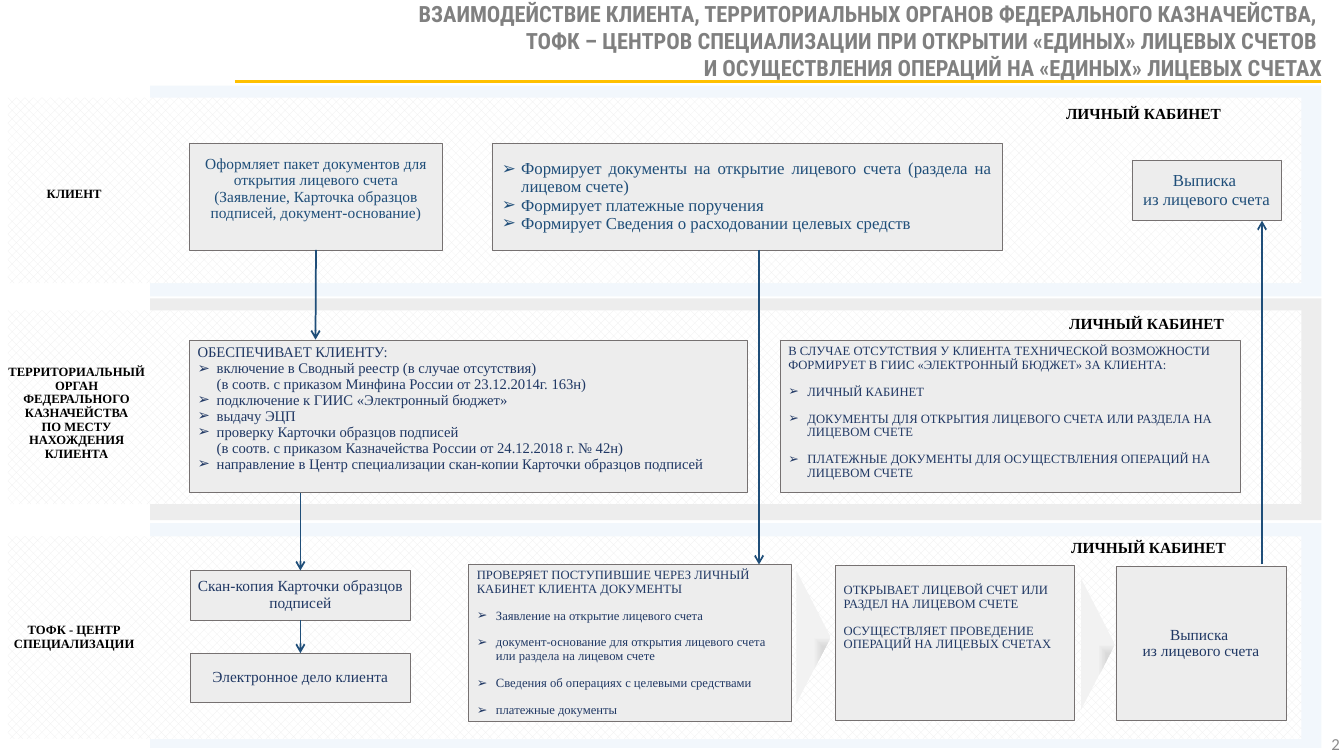
import pptx
import pptx.util
import pptx.dml.color
import pptx.enum.dml
import pptx.enum.shapes
import pptx.enum.text
import pptx.oxml.ns
import lxml.etree

RGBColor = pptx.dml.color.RGBColor
Pt = pptx.util.Pt
Shape = pptx.enum.shapes.MSO_SHAPE
Align = pptx.enum.text.PP_ALIGN
Anchor = pptx.enum.text.MSO_ANCHOR
qn = pptx.oxml.ns.qn

WHITE = RGBColor(0xFF, 0xFF, 0xFF)
BLACK = RGBColor(0, 0, 0)
PALE = RGBColor(0xF2, 0xF7, 0xFC)
GREY = RGBColor(0xED, 0xED, 0xED)
EDGE = RGBColor(0x76, 0x71, 0x71)
BLUE = RGBColor(0x1F, 0x4E, 0x79)
NAVY = RGBColor(0x20, 0x38, 0x64)
GOLD = RGBColor(0xFF, 0xC0, 0x00)
TITLE = RGBColor(0x80, 0x80, 0x80)
PAGE = RGBColor(0x8C, 0x8C, 0x8C)
SILVER = RGBColor(0xD9, 0xD9, 0xD9)
MIST = RGBColor(0xF2, 0xF2, 0xF2)

SERIF = "Times New Roman"
CELL = 0.1
COLS, ROWS = 133.33, 75
TIGHT = (0.01, 0.01, 0.01, 0.01)
WIDE = (0.08, 0.04, 0.08, 0.04)
PLAIN = (0.1, 0.05, 0.1, 0.05)


def grid(*cells):
    return [pptx.util.Inches(n * CELL) for n in cells]


def apply(item, style):
    for key, value in style.items():
        setattr(item, key, value)


class Board:
    def __init__(self, deck):
        deck.slide_width, deck.slide_height = grid(COLS, ROWS)
        self.slide = deck.slides.add_slide(deck.slide_layouts[4])
        self.shapes = self.slide.shapes
        self.para = {"line_spacing": 0.9, "space_before": Pt(0), "space_after": Pt(0)}

    def place(self, item, area):
        apply(item, dict(zip(("left", "top", "width", "height"), grid(*area))))
        self.shapes._spTree.append(item._element)

    def paint(self, item, fill, edge=None):
        item.fill.solid()
        item.fill.fore_color.rgb = fill
        if edge is None:
            item.line.fill.background()
        else:
            item.line.color.rgb = edge
            item.line.width = Pt(0.5)

    def text(self, item, lines, size, color, align=Align.CENTER, inset=TIGHT,
             anchor=Anchor.MIDDLE, bold=False, face=SERIF, pitch=0.9):
        frame = item.text_frame
        sides = ("margin_left", "margin_top", "margin_right", "margin_bottom")
        apply(frame, dict(zip(sides, map(pptx.util.Inches, inset))))
        apply(frame, {"word_wrap": True, "vertical_anchor": anchor,
                      "auto_size": pptx.enum.text.MSO_AUTO_SIZE.NONE})
        for spot, line in enumerate(lines):
            para = frame.paragraphs[0] if spot == 0 else frame.add_paragraph()
            para.text = line
            apply(para, {**self.para, "alignment": align, "line_spacing": pitch})
            for run in para.runs:
                apply(run.font, {"name": face, "size": Pt(size), "bold": bold})
                run.font.color.rgb = color
            for gap in para._p.findall(qn("a:br")):
                lxml.etree.SubElement(gap, qn("a:rPr"), sz=str(int(size * 100)))
        return frame.paragraphs

    def title(self, area, text):
        item = self.shapes.title
        self.place(item, area)
        self.text(item, [text], 16, TITLE, Align.RIGHT, WIDE, Anchor.TOP,
                  True, "Roboto Condensed", 1.0)

    def label(self, area, lines, size=9, color=BLACK, **look):
        item = self.shapes.add_textbox(*grid(*area))
        self.text(item, lines, size, color, **look)

    def box(self, area, lines, size=11, color=NAVY, **look):
        item = self.shapes.add_shape(Shape.RECTANGLE, *grid(*area))
        item.shadow.inherit = False
        self.paint(item, GREY, EDGE)
        self.text(item, lines, size, color, **look)
        return item

    def bullets(self, slot, area, head, items, size, color=NAVY, gap=0, **look):
        item = self.slide.placeholders[slot]
        self.place(item, area)
        self.paint(item, GREY, EDGE)
        paras = self.text(item, head + items, size, color, **look)
        for spot, para in enumerate(paras):
            props = para._p.get_or_add_pPr()
            if spot:
                para.space_before = Pt(gap)
            if spot < len(head):
                indent = 0
                lxml.etree.SubElement(props, qn("a:buNone"))
            else:
                indent = pptx.util.Inches(0.19)
                lxml.etree.SubElement(props, qn("a:buChar"), char="➢")
            props.set("marL", str(indent))
            props.set("indent", str(-indent))

    def lane(self, color, outer, inner, tag):
        back = self.shapes.add_shape(Shape.RECTANGLE, *grid(14.9, outer[0], 116.2, outer[1]))
        weave = self.shapes.add_shape(Shape.RECTANGLE, *grid(0.8, inner[0], 128.3, inner[1]))
        for item in (back, weave):
            item.shadow.inherit = False
            self.paint(item, color)
        weave.fill.patterned()
        weave.fill.pattern = pptx.enum.dml.MSO_PATTERN.WEAVE
        weave.fill.fore_color.rgb = GREY
        weave.fill.back_color.rgb = WHITE
        self.label((*tag, 16.9, 3.8), ["ЛИЧНЫЙ КАБИНЕТ"], 11, bold=True)

    def line(self, start, end, color=BLUE, width=1.25, arrow=True, tail=None, head=None):
        kind = pptx.enum.shapes.MSO_CONNECTOR.STRAIGHT
        item = self.shapes.add_connector(kind, *grid(*start, *end))
        item.line.color.rgb = color
        item.line.width = Pt(width)
        if tail is not None:
            item.begin_connect(tail, 2)
        if head is not None:
            item.end_connect(head, 0)
        if arrow:
            lxml.etree.SubElement(item.line._get_or_add_ln(), qn("a:tailEnd"), type="arrow")
        lxml.etree.SubElement(item._element.spPr, qn("a:effectLst"))

    def wedge(self, left, top):
        item = self.shapes.add_shape(Shape.FLOWCHART_MERGE, *grid(left, top, 13.2, 3.4))
        item.rotation = 270
        item.shadow.inherit = False
        item.line.fill.background()
        item.fill.gradient()
        for stop, color, spot in zip(item.fill.gradient_stops, (SILVER, MIST), (0.46, 1)):
            stop.color.rgb = color
            stop.position = spot
        grad = item._element.spPr.find(qn("a:gradFill"))
        old = grad.find(qn("a:lin"))
        focus = lxml.etree.Element(qn("a:path"), {"path": "rect"})
        lxml.etree.SubElement(focus, qn("a:fillToRect"), l="100000", t="100000")
        grad.replace(old, focus)


def main():
    deck = pptx.Presentation()
    board = Board(deck)
    for lane in (
        (PALE, (51.9, 22.3), (53.2, 20.1), (105.5, 52.5)),
        (GREY, (29.6, 22), (30.8, 19.2), (105.3, 30.3)),
        (PALE, (8.5, 20.9), (9.7, 18.4), (105, 9.5)),
    ):
        board.lane(*lane)
    for area, lines in (
        ((-0.1, 14.5, 14.9, 9.6), ["КЛИЕНТ"]),
        ((0.1, 34.4, 15, 13.2), ["ТЕРРИТОРИАЛЬНЫЙ ОРГАН ФЕДЕРАЛЬНОГО КАЗНАЧЕЙСТВА",
                                 "ПО МЕСТУ НАХОЖДЕНИЯ КЛИЕНТА"]),
        ((-0.1, 60.3, 14.9, 5.9), ["ТОФК - ЦЕНТР СПЕЦИАЛИЗАЦИИ"]),
    ):
        board.label(area, lines, bold=True)

    board.title((2.8, -0.4, 129.2, 8.9),
                "ВЗАИМОДЕЙСТВИЕ КЛИЕНТА, ТЕРРИТОРИАЛЬНЫХ ОРГАНОВ ФЕДЕРАЛЬНОГО КАЗНАЧЕЙСТВА, \v"
                "ТОФК – ЦЕНТРОВ СПЕЦИАЛИЗАЦИИ ПРИ ОТКРЫТИИ «ЕДИНЫХ» ЛИЦЕВЫХ СЧЕТОВ \v"
                "И ОСУЩЕСТВЛЕНИЯ ОПЕРАЦИЙ НА «ЕДИНЫХ» ЛИЦЕВЫХ СЧЕТАХ")
    board.line((23.3, 8.1), (131.1, 8.1), GOLD, 2, False)

    pack = board.box((18.8, 14.2, 25.1, 10.6),
                     ["Оформляет пакет документов для открытия лицевого счета "
                      "(Заявление, Карточка образцов подписей, документ-основание)"],
                     color=BLUE, inset=(0.1, 0.05, 0.1, 0.2))
    board.bullets(1, (48.8, 14.2, 50.6, 10.6), [],
                  ["Формирует документы на открытие лицевого счета (раздела на лицевом счете) ",
                   "Формирует платежные поручения",
                   "Формирует Сведения о расходовании целевых средств "],
                  12, BLUE, align=Align.JUSTIFY, inset=PLAIN)
    extract = ["Выписка ", "из лицевого счета"]
    board.box((112.3, 15.9, 14.8, 6), extract, 12, BLUE, inset=PLAIN)

    board.bullets(2, (18.8, 33.8, 55.3, 15.1), ["ОБЕСПЕЧИВАЕТ КЛИЕНТУ:"],
                  ["включение в Сводный реестр (в случае отсутствия) \v"
                   "(в соотв. с приказом Минфина России от 23.12.2014г. 163н)",
                   "подключение к ГИИС «Электронный бюджет»",
                   "выдачу ЭЦП",
                   "проверку Карточки образцов подписей \v"
                   "(в соотв. с приказом Казначейства России от 24.12.2018 г. № 42н)",
                   "направление в Центр специализации скан-копии Карточки образцов подписей "],
                  10.5, align=Align.LEFT, inset=(0.08, 0.01, 0.08, 0.17))
    top = {"align": Align.LEFT, "inset": WIDE, "anchor": Anchor.TOP}
    board.bullets(3, (77.4, 33.8, 45.7, 15.1),
                  ["В СЛУЧАЕ ОТСУТСТВИЯ У КЛИЕНТА ТЕХНИЧЕСКОЙ ВОЗМОЖНОСТИ "
                   "ФОРМИРУЕТ В ГИИС «ЭЛЕКТРОННЫЙ БЮДЖЕТ» ЗА КЛИЕНТА:"],
                  ["ЛИЧНЫЙ КАБИНЕТ",
                   "ДОКУМЕНТЫ ДЛЯ ОТКРЫТИЯ ЛИЦЕВОГО СЧЕТА ИЛИ РАЗДЕЛА НА ЛИЦЕВОМ СЧЕТЕ",
                   "ПЛАТЕЖНЫЕ ДОКУМЕНТЫ ДЛЯ ОСУЩЕСТВЛЕНИЯ ОПЕРАЦИЙ НА ЛИЦЕВОМ СЧЕТЕ"],
                  9, gap=9.5, **top)

    scan = board.box((18.9, 56.6, 21.8, 4.9), ["Скан-копия Карточки образцов подписей"])
    case = board.box((18.9, 64.8, 21.8, 4.9), ["Электронное дело клиента"])
    board.bullets(4, (46.5, 56, 32, 15.6),
                  ["ПРОВЕРЯЕТ ПОСТУПИВШИЕ ЧЕРЕЗ ЛИЧНЫЙ КАБИНЕТ КЛИЕНТА ДОКУМЕНТЫ"],
                  ["Заявление на открытие лицевого счета",
                   "документ-основание для открытия лицевого счета или раздела на лицевом счете",
                   "Сведения об операциях с целевыми средствами",
                   "платежные документы"],
                  9, gap=9.5, **top)
    launch = board.box((82.9, 56.1, 23.7, 15.4),
                       ["ОТКРЫВАЕТ ЛИЦЕВОЙ СЧЕТ ИЛИ РАЗДЕЛ НА ЛИЦЕВОМ СЧЕТЕ",
                        "ОСУЩЕСТВЛЯЕТ ПРОВЕДЕНИЕ ОПЕРАЦИЙ НА ЛИЦЕВЫХ СЧЕТАХ"],
                       9, **{**top, "inset": (0.08, 0.18, 0.08, 0.04)})
    launch.text_frame.paragraphs[1].space_before = Pt(9.5)
    board.box((110.7, 56.2, 16.9, 15.3), extract)
    board.wedge(74.1, 61.5)
    board.wedge(102.3, 62.2)

    board.line((31.3, 24.8), (31.3, 33.7), tail=pack)
    board.line((29.8, 48.9), (29.8, 56.6), head=scan)
    board.line((29.8, 61.5), (29.8, 64.8), tail=scan, head=case)
    board.line((75.3, 24.8), (75.3, 56))
    board.line((125.2, 56), (125.2, 21.9))
    board.label((128, 71.8, 5.9, 4), ["2"], 12, PAGE, align=Align.RIGHT,
                inset=PLAIN, face="Calibri", pitch=1.0)
    deck.save("out.pptx")


if __name__ == "__main__":
    main()
